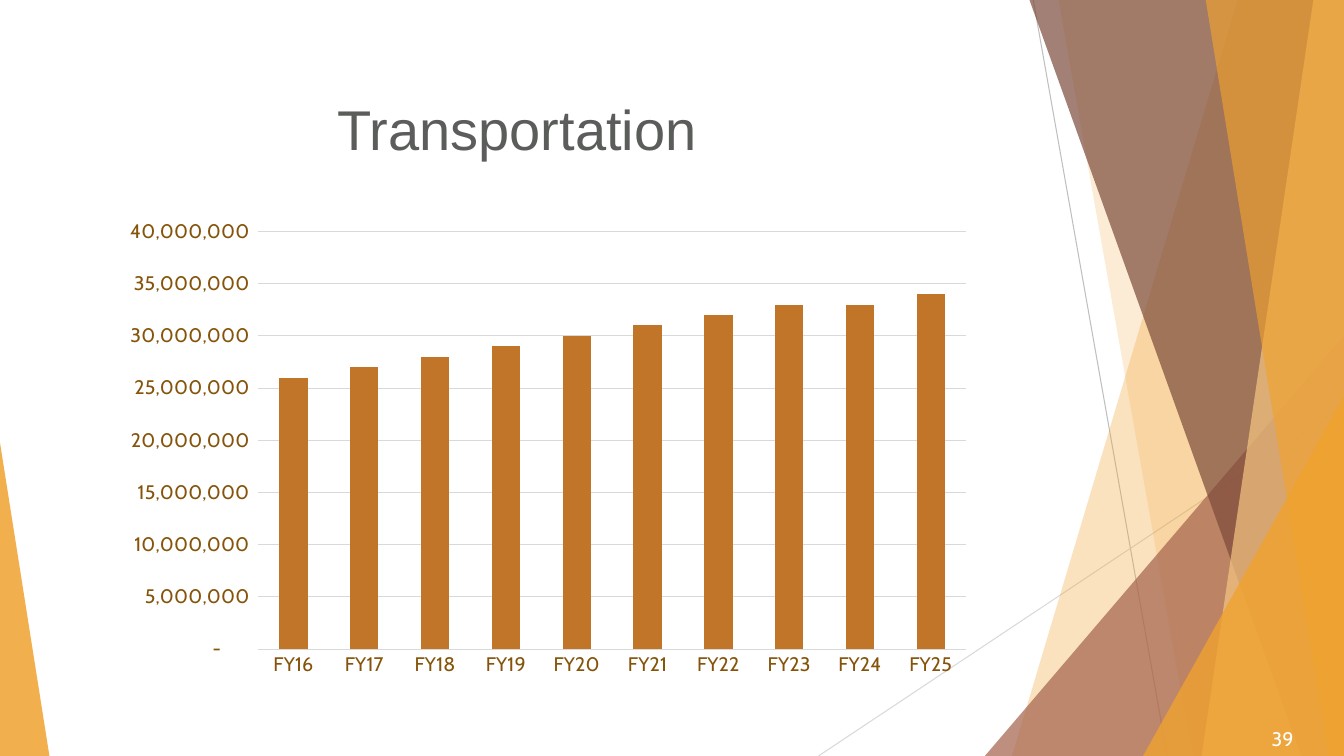
from lxml import etree
from pptx import Presentation
from pptx.chart.data import CategoryChartData
from pptx.dml.color import RGBColor
from pptx.enum.chart import XL_CHART_TYPE as CT, XL_TICK_MARK as TM
from pptx.enum.shapes import MSO_CONNECTOR as MC, MSO_SHAPE as MS
from pptx.enum.text import MSO_ANCHOR as MA, PP_ALIGN as PA
from pptx.oxml import parse_xml
from pptx.oxml.ns import nsdecls, qn
from pptx.util import Inches, Pt

AMBER = RGBColor(0xF0, 0xA2, 0x2E)
SAND = RGBColor(0xF6, 0xC7, 0x82)
RUST = RGBColor(0xA5, 0x64, 0x4E)
BROWN = RGBColor(0x7C, 0x4B, 0x3B)
BAR = RGBColor(0xC1, 0x75, 0x29)
AXIS_TEXT = RGBColor(0x85, 0x54, 0x0A)
TITLE_TEXT = RGBColor(0x5A, 0x5D, 0x59)
SILVER = RGBColor(0xBF, 0xBF, 0xBF)
LIGHT = RGBColor(0xD9, 0xD9, 0xD9)
WHITE = RGBColor(0xFF, 0xFF, 0xFF)


class Deck:
    """Draws on one slide, with lengths in percent of its width and height."""

    def __init__(self):
        self.prs = Presentation()
        self.prs.slide_width, self.prs.slide_height = Inches(13.33), Inches(7.5)
        self.s = self.prs.slides.add_slide(self.prs.slide_layouts[6])

    def x(self, share):
        return round(self.prs.slide_width * share / 100)

    def y(self, share):
        return round(self.prs.slide_height * share / 100)

    def box(self, left, top, width, height):
        return self.x(left), self.y(top), self.x(width), self.y(height)

    def set(self, obj, **values):
        for name, value in values.items():
            setattr(obj, name, value)

    def font(self, f, color, size, name):
        self.set(f, size=Pt(size), name=name)
        f.color.rgb = color

    def paint(self, sp, color, opacity):
        sp.shadow.inherit = False
        sp.line.fill.background()
        sp.fill.solid()
        sp.fill.fore_color.rgb = color
        clr = sp.fill._xPr.find(qn("a:solidFill"))[0]
        etree.SubElement(clr, qn("a:alpha"), val=str(opacity * 1000))

    def line(self, x1, y1, x2, y2, color):
        sp = self.s.shapes.add_connector(MC.STRAIGHT, self.x(x1), self.y(y1), self.x(x2), self.y(y2))
        sp.line.color.rgb = color
        sp.line.width = Pt(0.75)
        etree.SubElement(sp._element.spPr, qn("a:effectLst"))

    def band(self, top_x, bottom_x, color, opacity):
        fb = self.s.shapes.build_freeform(self.x(top_x), self.y(-0.1))
        corners = [(100, -0.1), (100, 100), (bottom_x, 100)]
        fb.add_line_segments([(self.x(x), self.y(y)) for x, y in corners])
        self.paint(fb.convert_to_shape(), color, opacity)

    def wedge(self, left, top, width, peak, color, opacity):
        sp = self.s.shapes.add_shape(MS.ISOSCELES_TRIANGLE, *self.box(left, top, width, 100 - top))
        sp.adjustments[0] = peak
        self.paint(sp, color, opacity)

    def text(self, area, words, anchor, align, **style):
        tf = self.s.shapes.add_textbox(*self.box(*area)).text_frame
        self.set(tf, word_wrap=True, vertical_anchor=anchor)
        p = tf.paragraphs[0]
        p.alignment = align
        r = p.add_run()
        r.text = words
        self.font(r.font, **style)

    def columns(self, area, plot, cats, vals):
        data = CategoryChartData()
        data.categories = cats
        data.add_series("Series 1", vals)
        chart = self.s.shapes.add_chart(CT.COLUMN_CLUSTERED, *self.box(*area), data).chart
        self.set(chart, has_legend=False, has_title=False)
        self.set(chart.font, name="Cabin", size=Pt(10))
        self.set(chart.plots[0], gap_width=150, vary_by_categories=False)
        fill = chart.plots[0].series[0].format.fill
        fill.solid()
        fill.fore_color.rgb = BAR
        for axis in (chart.category_axis, chart.value_axis):
            self.set(axis, major_tick_mark=TM.NONE, minor_tick_mark=TM.NONE)
            axis.format.line.fill.background()
            self.font(axis.tick_labels.font, AXIS_TEXT, 14, "Cabin")
        value = chart.value_axis
        self.set(value, minimum_scale=0, maximum_scale=40_000_000, major_unit=5_000_000)
        self.set(value.tick_labels, number_format_is_linked=False,
                 number_format='_(* #,##0_);_(* \\(#,##0\\);_(* "-"??_);_(@_)')
        grid = value.major_gridlines.format.line
        grid.color.rgb = LIGHT
        grid.width = Pt(0.75)
        self.place_plot(chart, plot)

    def place_plot(self, chart, plot):
        area = chart._chartSpace.chart.plotArea
        for old in area.findall(qn("c:layout")):
            area.remove(old)
        parts = [("layoutTarget", "inner"), ("xMode", "edge"), ("yMode", "edge")]
        parts += zip("xywh", [share / 100 for share in plot])
        inner = "".join(f'<c:{tag} val="{val}"/>' for tag, val in parts)
        area.insert(0, parse_xml(
            f'<c:layout {nsdecls("c")}><c:manualLayout>{inner}</c:manualLayout></c:layout>'))


def main():
    d = Deck()
    d.line(76.88, 0, 86.85, 100, SILVER)
    d.line(100, 53.73, 60.9, 100, LIGHT)
    d.band(92.1, 75.3, AMBER, 30)
    d.band(78.75, 88.73, AMBER, 20)
    d.wedge(73.28, 44.4, 26.72, 1, RUST, 72)
    d.band(76.58, 96.83, BROWN, 70)
    d.band(97.73, 89.4, SAND, 70)
    d.band(89.7, 98.85, AMBER, 65)
    d.wedge(85.05, 52.4, 14.95, 1, AMBER, 80)
    d.wedge(0, 58.53, 3.68, 0, AMBER, 85)
    d.text((24.38, 5.33, 61.5, 16.67), "Transportation", MA.BOTTOM, PA.LEFT,
           color=TITLE_TEXT, size=40, name="Arial")
    d.text((90.23, 95.5, 6.75, 4.4), "39", MA.MIDDLE, PA.RIGHT,
           color=WHITE, size=14, name="Cabin")
    millions = [26, 27, 28, 29, 30, 31, 32, 33, 33, 34]
    d.columns((8.18, 26.67, 63.75, 66), (17.3, 6, 82.7, 83.7),
              [f"FY{year}" for year in range(16, 26)],
              [m * 1_000_000 for m in millions])
    d.prs.save("out.pptx")


if __name__ == "__main__":
    main()
